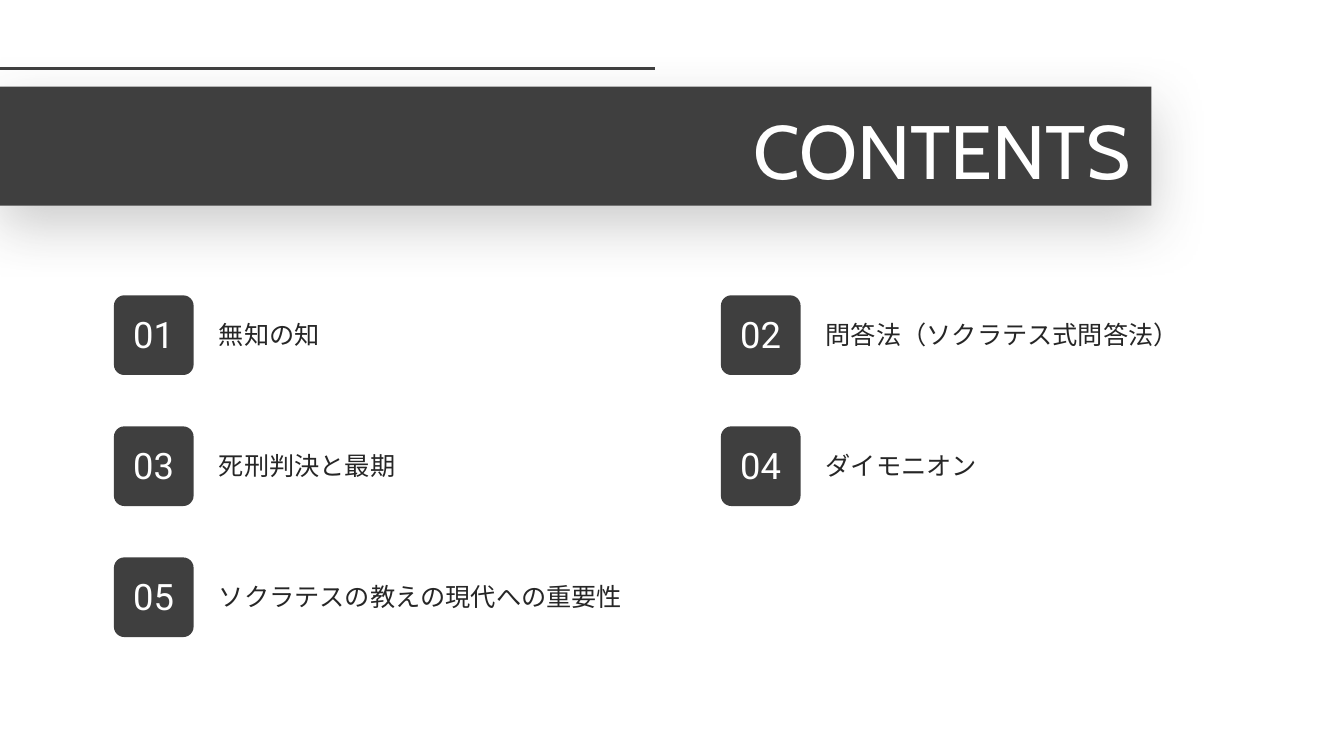
from lxml.etree import SubElement
from pptx import Presentation
from pptx.dml.color import RGBColor
from pptx.enum.shapes import MSO_CONNECTOR, MSO_SHAPE
from pptx.enum.text import MSO_ANCHOR, MSO_AUTO_SIZE, PP_ALIGN
from pptx.oxml.ns import qn
from pptx.util import Inches, Pt

COLORS = {"dark": "3F3F3F", "white": "FFFFFF", "text": "262626"}
TOPICS = [
    "無知の知",
    "問答法（ソクラテス式問答法）",
    "死刑判決と最期",
    "ダイモニオン",
    "ソクラテスの教えの現代への重要性",
]


def color(name):
    """Return the named palette colour."""
    return RGBColor.from_string(COLORS[name])


def write(shape, text, font, size, color_name, align):
    """Put one formatted, vertically centred line of text in a shape."""
    frame = shape.text_frame
    frame.auto_size = MSO_AUTO_SIZE.NONE
    frame.word_wrap = True
    frame.vertical_anchor = MSO_ANCHOR.MIDDLE
    frame.margin_left = frame.margin_right = 0
    frame.margin_top = frame.margin_bottom = 0
    frame.text = text
    paragraph = frame.paragraphs[0]
    paragraph.alignment = align
    paragraph.font.name = font
    paragraph.font.size = Pt(size)
    paragraph.font.color.rgb = color(color_name)


def add_text(slide, left, top, width, height, *style):
    """Add a text box, with its place in inches."""
    box = slide.shapes.add_textbox(
        Inches(left), Inches(top), Inches(width), Inches(height))
    write(box, *style)


def add_block(slide, kind, left, top, width, height):
    """Add a plain dark shape, with its place in inches."""
    block = slide.shapes.add_shape(
        kind, Inches(left), Inches(top), Inches(width), Inches(height))
    block.shadow.inherit = False
    block.fill.solid()
    block.fill.fore_color.rgb = color("dark")
    block.line.fill.background()
    return block


def add_soft_shadow(shape):
    """Give a shape a wide, faint shadow below it."""
    effects = shape._element.spPr.find(qn("a:effectLst"))
    shadow = SubElement(
        effects, qn("a:outerShdw"), blurRad=str(Pt(40)), dist=str(Pt(15)),
        dir=str(90 * 60000), algn="t", rotWithShape="0")
    tint = SubElement(shadow, qn("a:srgbClr"), val=COLORS["dark"])
    SubElement(tint, qn("a:alpha"), val="25000")


def add_header(slide, left, top, width, height):
    """Place the banner, its title and the rule above it."""
    banner = add_block(slide, MSO_SHAPE.RECTANGLE, left, top, width, height)
    add_soft_shadow(banner)

    title = slide.shapes.title
    title.left, title.top = Inches(left + 3.63), Inches(top + 0.15)
    title.width, title.height = Inches(width - 3.84), Inches(0.94)
    write(title, "CONTENTS", "Cabin", 54, "white", PP_ALIGN.RIGHT)
    banner._element.addnext(title._element)

    rule_top = Inches(top - 0.18)
    rule = slide.shapes.add_connector(
        MSO_CONNECTOR.STRAIGHT, Inches(left), rule_top, Inches(left + 6.5), rule_top)
    rule.line.color.rgb = color("dark")
    rule.line.width = Pt(1.5)
    SubElement(rule._element.spPr, qn("a:effectLst"))


def add_topic(slide, left, top, number, topic):
    """Place a numbered badge with its topic to the right."""
    badge = add_block(slide, MSO_SHAPE.ROUNDED_RECTANGLE, left, top, 0.79, 0.79)
    badge.adjustments[0] = 0.13
    add_text(slide, left + 0.08, top + 0.15, 0.63, 0.47,
             f"{number:02}", "Roboto", 26, "white", PP_ALIGN.CENTER)
    add_text(slide, left + 1.04, top - 0.08, 4.41, 0.94,
             topic, "Cambria", 18, "text", PP_ALIGN.LEFT)


def add_topics(slide, left, top, column_step, row_step):
    """Lay out the topics in two columns, row by row."""
    for index, topic in enumerate(TOPICS):
        row, column = divmod(index, 2)
        add_topic(slide, left + column * column_step, top + row * row_step,
                  index + 1, topic)


def main():
    """Build the contents slide and save it."""
    presentation = Presentation()
    presentation.slide_width = Inches(13.33)
    presentation.slide_height = Inches(7.5)
    slide = presentation.slides.add_slide(presentation.slide_layouts[5])
    slide.background.fill.solid()
    slide.background.fill.fore_color.rgb = color("white")
    add_header(slide, 0, 0.86, 11.42, 1.18)
    add_topics(slide, 1.13, 2.93, 6.02, 1.3)
    presentation.save("out.pptx")


if __name__ == "__main__":
    main()
